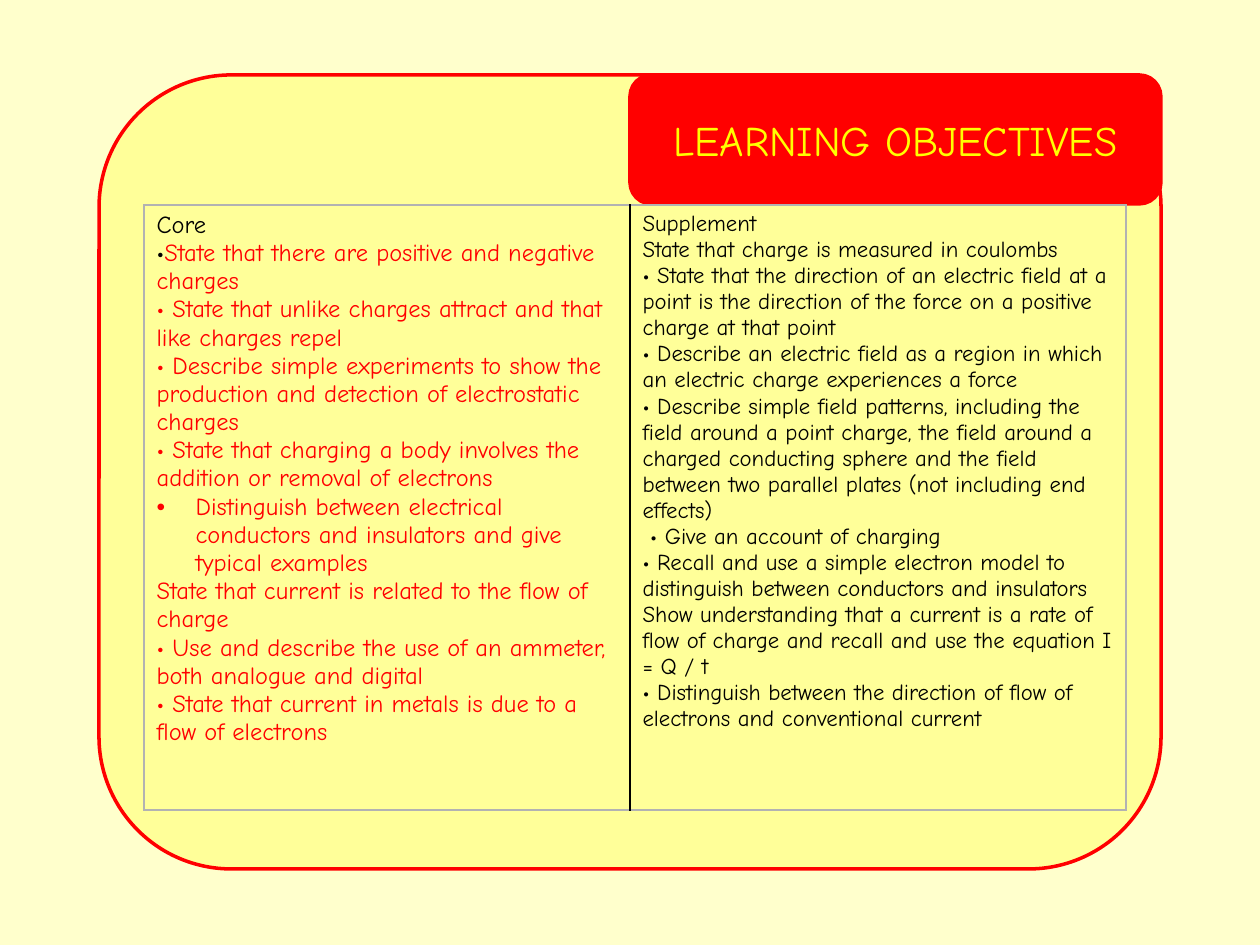
from lxml import etree
from pptx import Presentation
from pptx import util as u
from pptx.dml.color import RGBColor
from pptx.enum import shapes, text
from pptx.oxml import ns

PX = 914400 / 126
FONT = "Comic Neue"
RED, BLACK, GREY = "FF0000", "000000", "B2B2B2"
YELLOW, PALE, CREAM = "FFFF00", "FFFF99", "FFFFCC"

CORE = [
    "State that there are positive and negative charges",
    "• State that unlike charges attract and that like charges repel",
    "• Describe simple experiments to show the production and detection of electrostatic charges",
    "• State that charging a body involves the addition or removal of electrons",
    "Distinguish between electrical conductors and insulators and give typical examples",
    "State that current is related to the flow of charge",
    "• Use and describe the use of an ammeter, both analogue and digital",
    "• State that current in metals is due to a flow of electrons",
]
SUPPLEMENT = [
    "State that charge is measured in coulombs",
    "• State that the direction of an electric field at a point is the direction of the force "
    "on a positive charge at that point",
    "• Describe an electric field as a region in which an electric charge experiences a force",
    "• Describe simple field patterns, including the field around a point charge, the field around "
    "a charged conducting sphere and the field between two parallel plates (not including end effects)",
    " • Give an account of charging",
    "• Recall and use a simple electron model to distinguish between conductors and insulators",
    "Show understanding that a current is a rate of flow of charge and recall and use the "
    "equation I = Q / t",
    "• Distinguish between the direction of flow of electrons and conventional current",
]


def px(n):
    return u.Emu(round(n * PX))


def rgb(value):
    return RGBColor.from_string(value)


def style_run(run, size, color):
    run.font.name = FONT
    run.font.size = u.Pt(size)
    run.font.color.rgb = rgb(color)


def add_panel(slide, kind, box, fill, line=None):
    panel = slide.shapes.add_shape(kind, *map(px, box))
    panel.shadow.inherit = False
    panel.fill.solid()
    panel.fill.fore_color.rgb = rgb(fill)
    if line:
        panel.line.color.rgb = rgb(line)
        panel.line.width = u.Pt(2)
    else:
        panel.line.fill.background()
    return panel


def add_title(panel, words):
    frame = panel.text_frame
    frame.text = words
    frame.vertical_anchor = text.MSO_ANCHOR.MIDDLE
    paragraph = frame.paragraphs[0]
    paragraph.alignment = text.PP_ALIGN.CENTER
    style_run(paragraph.runs[0], 24, YELLOW)


def set_borders(cell, left, right):
    properties = cell._tc.get_or_add_tcPr()
    sides = [("lnL", left), ("lnR", right), ("lnT", GREY), ("lnB", GREY)]
    for position, (side, color) in enumerate(sides):
        border = etree.Element(ns.qn("a:" + side), w=str(u.Pt(1)))
        fill = etree.SubElement(border, ns.qn("a:solidFill"))
        etree.SubElement(fill, ns.qn("a:srgbClr"), val=color)
        properties.insert(position, border)


def fill_cell(cell, heading, objectives, size, color):
    cell.fill.background()
    frame = cell.text_frame
    frame.text = "\n".join([heading, *objectives])
    for paragraph in frame.paragraphs:
        style_run(paragraph.runs[0], size, color)
    style_run(frame.paragraphs[0].runs[0], size, BLACK)
    return frame.paragraphs


def add_bullet(paragraph, indent):
    properties = paragraph._p.get_or_add_pPr()
    properties.set("marL", str(px(indent)))
    properties.set("indent", str(-px(indent)))
    etree.SubElement(properties, ns.qn("a:buFont"), typeface="Arial")
    etree.SubElement(properties, ns.qn("a:buChar"), char="•")


def add_black_dot(paragraph, size):
    objective = paragraph.runs[0]
    dot = paragraph.add_run()
    dot.text = "•"
    style_run(dot, size, BLACK)
    objective._r.addprevious(dot._r)


def add_objectives(slide):
    widths = [486, 496]
    frame = slide.shapes.add_table(1, 2, px(144), px(205), px(sum(widths)), px(605))
    table = frame.table
    table.first_row = table.horz_banding = False
    for column, width in zip(table.columns, widths):
        column.width = px(width)
    core, supplement = table.rows[0].cells
    core_lines = fill_cell(core, "Core", CORE, 14, RED)
    add_black_dot(core_lines[1], 14)
    add_bullet(core_lines[5], 39)
    fill_cell(supplement, "Supplement", SUPPLEMENT, 13, BLACK)
    set_borders(core, GREY, BLACK)
    set_borders(supplement, BLACK, GREY)


def main():
    deck = Presentation()
    deck.slide_width, deck.slide_height = px(1260), px(945)
    slide = deck.slides.add_slide(deck.slide_layouts[6])
    slide.background.fill.solid()
    slide.background.fill.fore_color.rgb = rgb(PALE)
    kinds = shapes.MSO_SHAPE
    add_panel(slide, kinds.RECTANGLE, (0, 0, 1260, 945), CREAM)
    add_panel(slide, kinds.ROUNDED_RECTANGLE, (99, 75, 1062, 794), PALE, RED)
    banner = add_panel(slide, kinds.ROUNDED_RECTANGLE, (630, 75, 531, 129), RED, RED)
    add_title(banner, "LEARNING OBJECTIVES")
    add_objectives(slide)
    deck.save("out.pptx")


if __name__ == "__main__":
    main()
